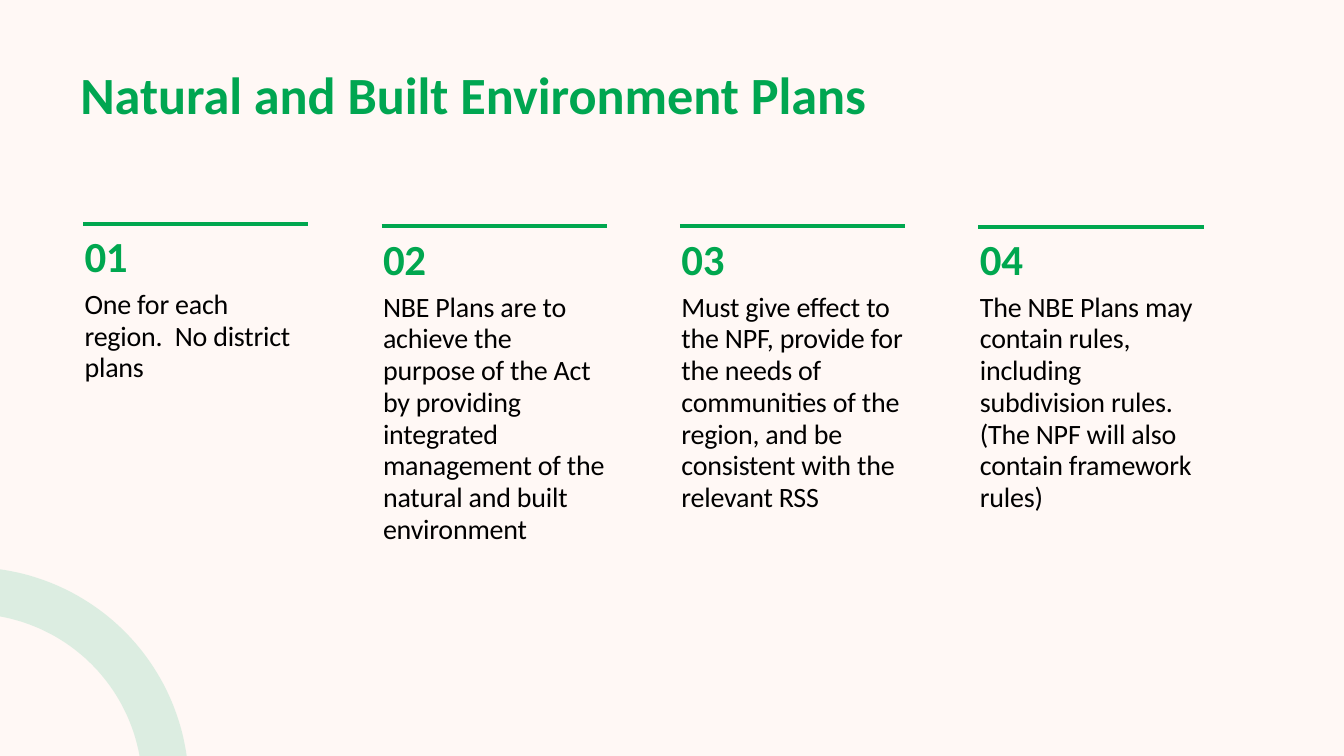
import math

import pptx
import pptx.dml.color
import pptx.enum.shapes
import pptx.enum.text
import pptx.oxml
import pptx.oxml.ns
import pptx.util
from pptx.util import Cm

# Content
TITLE = "Natural and Built Environment Plans"
COLUMNS = [  # text, top of the text box, top of the rule (cm)
    ("One for each region.  No district plans", 4.22, 4.23),
    ("NBE Plans are to achieve the purpose of the Act by providing integrated "
     "management of the natural and built environment", 4.27, 4.27),
    ("Must give effect to the NPF, provide for the needs of communities of the "
     "region, and be consistent with the relevant RSS", 4.27, 4.27),
    ("The NBE Plans may contain rules, including subdivision rules. "
     "(The NPF will also contain framework rules)", 4.27, 4.29),
]

# Look and layout (cm)
COLORS = {"background": "FFF8F5", "title": "00A651", "accent": "00A74F",
          "body": "000000", "ring": "CEE9D9"}
FONT = "Calibri"
SLIDE_WIDTH, SLIDE_HEIGHT = 25.4, 14.29
COLUMN_LEFT, COLUMN_PITCH, COLUMN_WIDTH, COLUMN_HEIGHT = 1.57, 5.64, 4.26, 6.1
RING_OFFSET, RING_OUTER, RING_INNER = 0.58, 4.15, 3.27
RING_STEPS = 48


def rgb(name):
    return pptx.dml.color.RGBColor.from_string(COLORS[name])


def set_font(paragraph, size, color, bold=False, spacing=0):
    font = paragraph.font
    font.name = FONT
    font.size = pptx.util.Pt(size)
    font.bold = bold
    font.color.rgb = rgb(color)
    if spacing:
        properties = paragraph._p.get_or_add_pPr()
        properties.find(pptx.oxml.ns.qn("a:defRPr")).set("spc", str(spacing))


def ring_arc(radius):
    """Points of the arc, from the left slide edge to the bottom edge."""
    end = math.asin(RING_OFFSET / radius)
    start = math.acos(RING_OFFSET / radius)
    angles = [start + (end - start) * i / RING_STEPS for i in range(RING_STEPS + 1)]
    return [(Cm(radius * math.cos(angle) - RING_OFFSET),
             Cm(SLIDE_HEIGHT + RING_OFFSET - radius * math.sin(angle)))
            for angle in angles]


presentation = pptx.Presentation()
presentation.slide_width = Cm(SLIDE_WIDTH)
presentation.slide_height = Cm(SLIDE_HEIGHT)
slide = presentation.slides.add_slide(presentation.slide_layouts[6])
slide.background.fill.solid()
slide.background.fill.fore_color.rgb = rgb("background")

# Corner ring, cut off by the slide edges
points = ring_arc(RING_OUTER) + ring_arc(RING_INNER)[::-1]
builder = slide.shapes.build_freeform(*points[0])
builder.add_line_segments(points[1:], close=True)
ring = builder.convert_to_shape()
ring.shadow.inherit = False
ring.line.fill.background()
ring.fill.solid()
ring.fill.fore_color.rgb = rgb("ring")
ring_color = ring._element.spPr.find(".//" + pptx.oxml.ns.qn("a:srgbClr"))
pptx.oxml.ns.qn("a:alpha")
ring_color.append(pptx.oxml.parse_xml(
    f'<a:alpha {pptx.oxml.ns.nsdecls("a")} val="70000"/>'))

# Title
title = slide.shapes.add_textbox(Cm(1.27), Cm(1.02), Cm(22.86), Cm(1.5))
title.text_frame.word_wrap = True
title.text_frame.vertical_anchor = pptx.enum.text.MSO_ANCHOR.MIDDLE
title.text_frame.text = TITLE
set_font(title.text_frame.paragraphs[0], 28, "title", bold=True)

# Numbered columns, each under a rule
for index, (text, text_top, rule_top) in enumerate(COLUMNS):
    left = COLUMN_LEFT + index * COLUMN_PITCH

    box = slide.shapes.add_textbox(Cm(left), Cm(text_top),
                                   Cm(COLUMN_WIDTH), Cm(COLUMN_HEIGHT))
    frame = box.text_frame
    frame.word_wrap = True
    frame.margin_left = frame.margin_right = frame.margin_bottom = 0
    frame.margin_top = Cm(0.13)
    frame.text = f"{index + 1:02}\n{text}"
    number, body = frame.paragraphs
    for paragraph in (number, body):
        paragraph._p.get_or_add_pPr().set("marL", str(Cm(0.03)))
    body.line_spacing = pptx.util.Pt(17)
    body.space_before = pptx.util.Pt(3.6)
    set_font(number, 23, "accent", bold=True, spacing=-20)
    set_font(body, 15, "body", spacing=-10)

    rule = slide.shapes.add_connector(
        pptx.enum.shapes.MSO_CONNECTOR.STRAIGHT,
        Cm(left), Cm(rule_top), Cm(left + COLUMN_WIDTH), Cm(rule_top))
    rule.line.color.rgb = rgb("accent")
    rule.line.width = pptx.util.Pt(2)
    rule._element.spPr.append(pptx.oxml.parse_xml(
        f'<a:effectLst {pptx.oxml.ns.nsdecls("a")}/>'))

presentation.save("out.pptx")
